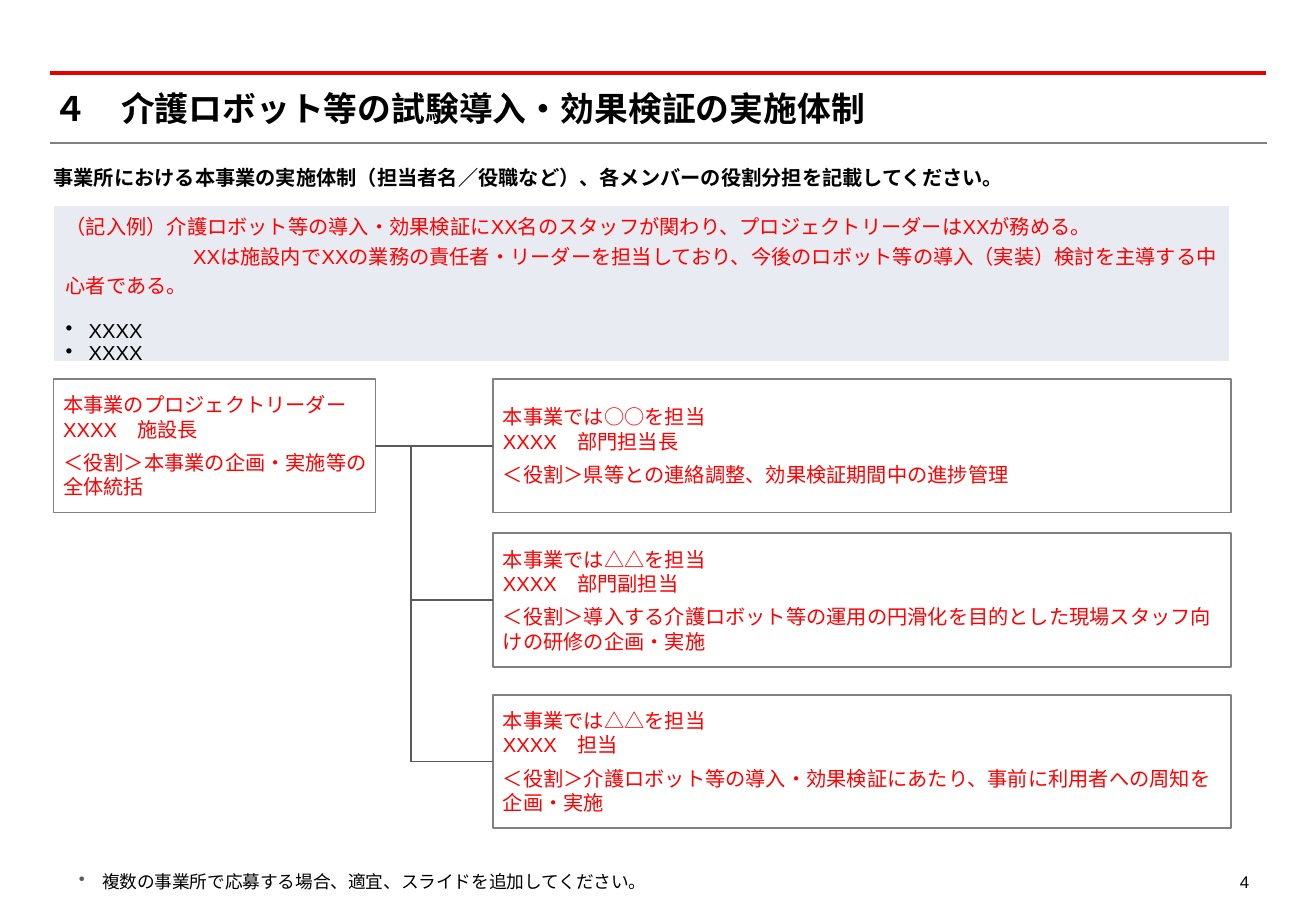
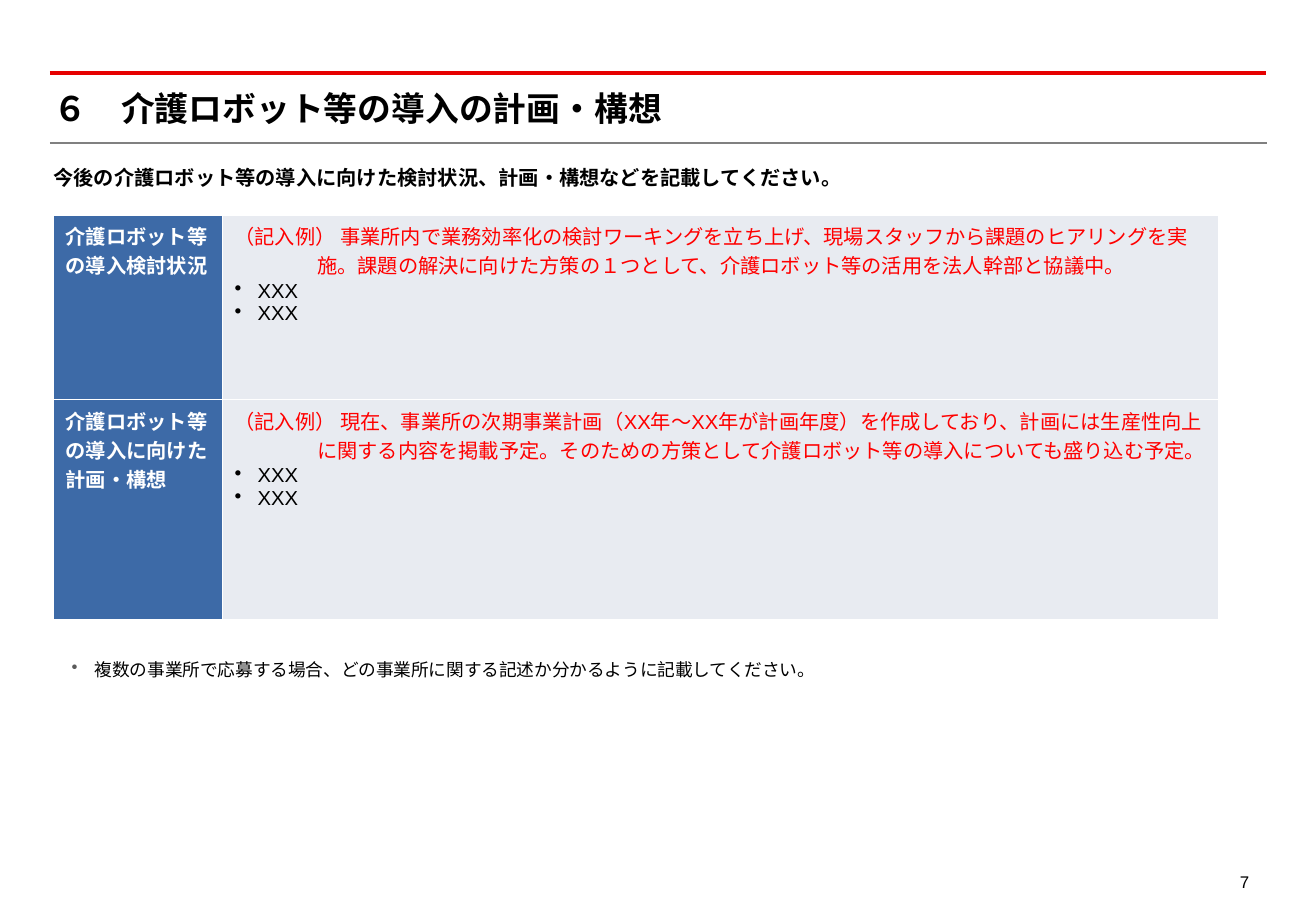
from lxml.etree import SubElement
from pptx import Presentation
from pptx.dml.color import RGBColor
from pptx.enum.shapes import MSO_CONNECTOR as CONN, MSO_SHAPE as SHAPE
from pptx.enum.text import MSO_ANCHOR as ANCHOR, PP_ALIGN as ALIGN
from pptx.oxml.ns import qn
from pptx.util import Inches, Pt

# ---- Shared look
W, H = 10.83, 7.5
LEFT, TEXT_W = 0.44, 9.91
FONT = "Arial"
C = dict(red="E60000", rule="808080", link="5A5A5A", black="000000", white="FFFFFF",
         example="FF0000", head="3D6AA7", pale="E8EBF1")

BASE = dict(size=12, color="black", bold=False, left=0, indent=0, bullet=None,
            before=0, align=ALIGN.LEFT)
STYLES = dict(
    title=dict(size=20, bold=True),
    lead=dict(bold=True),
    note=dict(size=10.5, left=0.19, indent=-0.19, bullet="link"),
    page=dict(size=10, align=ALIGN.RIGHT),
    example=dict(color="example"),
    example_inset=dict(color="example", indent=1.05),
    example_hang=dict(color="example", left=0.68, indent=-0.68),
    role=dict(color="example", before=5.5),
    item=dict(left=0.19, indent=-0.19, bullet="black"),
    item_apart=dict(left=0.19, indent=-0.19, bullet="black", before=12),
    head=dict(color="white", bold=True),
)

# ---- Content
TEAM = dict(
    title="４　介護ロボット等の試験導入・効果検証の実施体制", page="4",
    lead="事業所における本事業の実施体制（担当者名／役職など）、各メンバーの役割分担を記載してください。",
    note="複数の事業所で応募する場合、適宜、スライドを追加してください。", note_at=(0.65, 7.14),
    table_top=1.69, cols=[9.68], rows=[1.29], cells=[[("pale", [
        ("example", "（記入例）介護ロボット等の導入・効果検証にXX名のスタッフが関わり、プロジェクトリーダーはXXが務める。"),
        ("example_inset", "XXは施設内でXXの業務の責任者・リーダーを担当しており、今後のロボット等の導入（実装）検討を主導する中心者である。"),
        ("item_apart", "XXXX"), ("item", "XXXX")])]],
)
LEADER = ("本事業のプロジェクトリーダー\nXXXX　施設長", "＜役割＞本事業の企画・実施等の全体統括")
MEMBERS = [
    (3.12, "本事業では○○を担当\nXXXX　部門担当長",
     "＜役割＞県等との連絡調整、効果検証期間中の進捗管理"),
    (4.39, "本事業では△△を担当\nXXXX　部門副担当",
     "＜役割＞導入する介護ロボット等の運用の円滑化を目的とした現場スタッフ向けの研修の企画・実施"),
    (5.72, "本事業では△△を担当\nXXXX　担当",
     "＜役割＞介護ロボット等の導入・効果検証にあたり、事前に利用者への周知を企画・実施"),
]
LEADER_W, MEMBER_X, MEMBER_W, BOX_H, TRUNK_X = 2.65, 4.06, 6.07, 1.1, 3.38

PLAN = dict(
    title="６　介護ロボット等の導入の計画・構想", page="7",
    lead="今後の介護ロボット等の導入に向けた検討状況、計画・構想などを記載してください。",
    note="複数の事業所で応募する場合、どの事業所に関する記述か分かるように記載してください。", note_at=(0.59, 5.4),
    table_top=1.77, cols=[1.39, 8.2], rows=[1.52, 1.81], cells=[
        [("head", [("head", heading)]),
         ("pale", [("example_hang", example), ("item", "XXX"), ("item", "XXX")])]
        for heading, example in [
            ("介護ロボット等の導入検討状況",
             "（記入例） 事業所内で業務効率化の検討ワーキングを立ち上げ、現場スタッフから課題のヒアリングを実施。"
             "課題の解決に向けた方策の１つとして、介護ロボット等の活用を法人幹部と協議中。"),
            ("介護ロボット等の導入に向けた計画・構想",
             "（記入例） 現在、事業所の次期事業計画（XX年～XX年が計画年度）を作成しており、計画には生産性向上に関する内容を掲載予定。"
             "そのための方策として介護ロボット等の導入についても盛り込む予定。"),
        ]],
)


# ---- Helpers
def rgb(name):
    return RGBColor.from_string(C[name])


def write(tf, paragraphs):
    for i, (style, text) in enumerate(paragraphs):
        f = {**BASE, **STYLES[style]}
        p = tf.add_paragraph() if i else tf.paragraphs[0]
        p.text = text
        p.alignment, p.space_before, p.line_spacing = f["align"], Pt(f["before"]), 1.0
        pPr = p._p.get_or_add_pPr()
        for key, length in (("marL", f["left"]), ("indent", f["indent"])):
            pPr.set(key, str(Inches(length)))
        if f["bullet"]:
            clr = SubElement(pPr, qn("a:buClr"))
            SubElement(clr, qn("a:srgbClr")).set("val", C[f["bullet"]])
            SubElement(pPr, qn("a:buChar")).set("char", "•")
        for r in p.runs:
            for attr, value in dict(name=FONT, size=Pt(f["size"]), bold=f["bold"]).items():
                setattr(r.font, attr, value)
            r.font.color.rgb = rgb(f["color"])


def set_frame(tf, margins, anchor):
    tf.word_wrap, tf.vertical_anchor = True, anchor
    for side, m in zip(("left", "top", "right", "bottom"), margins):
        setattr(tf, "margin_" + side, Inches(m))


def add_text(s, x, y, w, h, style, text):
    tf = s.shapes.add_textbox(*map(Inches, (x, y, w, h))).text_frame
    set_frame(tf, (0, 0, 0, 0), ANCHOR.MIDDLE)
    write(tf, [(style, text)])


def add_line(s, x1, y1, x2, y2, color="link", width=1):
    ln = s.shapes.add_connector(CONN.STRAIGHT, *map(Inches, (x1, y1, x2, y2)))
    ln.line.color.rgb, ln.line.width = rgb(color), Pt(width)
    SubElement(ln._element.spPr, qn("a:effectLst"))
    return ln


def add_box(s, x, y, w, duty, role):
    sp = s.shapes.add_shape(SHAPE.RECTANGLE, *map(Inches, (x, y, w, BOX_H)))
    sp.shadow.inherit = False
    sp.fill.background()
    sp.line.color.rgb, sp.line.width = rgb("rule"), Pt(1)
    set_frame(sp.text_frame, (0.08, 0.02, 0.04, 0.02), ANCHOR.MIDDLE)
    write(sp.text_frame, [("example", duty), ("role", role)])
    return sp


def add_table(s, top, cols, rows, cells):
    size = map(Inches, (LEFT, top, sum(cols), sum(rows)))
    table = s.shapes.add_table(len(rows), len(cols), *size).table
    table.first_row = table.horz_banding = False
    for col, w in zip(table.columns, cols):
        col.width = Inches(w)
    for row, h, contents in zip(table.rows, rows, cells):
        row.height = Inches(h)
        for cell, (fill, paragraphs) in zip(row.cells, contents):
            for side, m in dict(left=0.1, top=0.05, right=0.1, bottom=0).items():
                setattr(cell, "margin_" + side, Inches(m))
            tcPr = cell._tc.get_or_add_tcPr()
            for tag in ("a:lnL", "a:lnR", "a:lnT", "a:lnB"):
                edge = SubElement(tcPr, qn(tag), w=str(Pt(1)))
                paint = SubElement(edge, qn("a:solidFill"))
                SubElement(paint, qn("a:srgbClr")).set("val", C["white"])
            cell.fill.solid()
            cell.fill.fore_color.rgb = rgb(fill)
            write(cell.text_frame, paragraphs)


def add_page(prs, d):
    s = prs.slides.add_slide(prs.slide_layouts[6])
    add_line(s, 0.41, 0.6, 10.42, 0.6, "red", 2)
    add_line(s, 0.41, 1.18, 10.43, 1.18, "rule", 1.25)
    add_text(s, LEFT, 0.72, TEXT_W, 0.34, "title", d["title"])
    add_text(s, LEFT, 1.34, TEXT_W, 0.24, "lead", d["lead"])
    add_table(s, d["table_top"], d["cols"], d["rows"], d["cells"])
    add_text(s, *d["note_at"], 9.3, 0.23, "note", d["note"])
    add_text(s, 9.93, 7.12, 0.35, 0.28, "page", d["page"])
    return s


def add_team_chart(s):
    leader = add_box(s, LEFT, MEMBERS[0][0], LEADER_W, *LEADER)
    mids = [top + BOX_H / 2 for top, *_ in MEMBERS]
    for i, ((top, *texts), mid) in enumerate(zip(MEMBERS, mids)):
        member = add_box(s, MEMBER_X, top, MEMBER_W, *texts)
        branch = add_line(s, TRUNK_X, mid, MEMBER_X, mid)
        if i == 0:
            branch.begin_connect(leader, 3)
        branch.end_connect(member, 1)
    add_line(s, TRUNK_X, mids[0], TRUNK_X, mids[-1])


def main():
    prs = Presentation()
    prs.slide_width, prs.slide_height = Inches(W), Inches(H)
    add_team_chart(add_page(prs, TEAM))
    add_page(prs, PLAN)
    prs.save("out.pptx")


if __name__ == "__main__":
    main()
